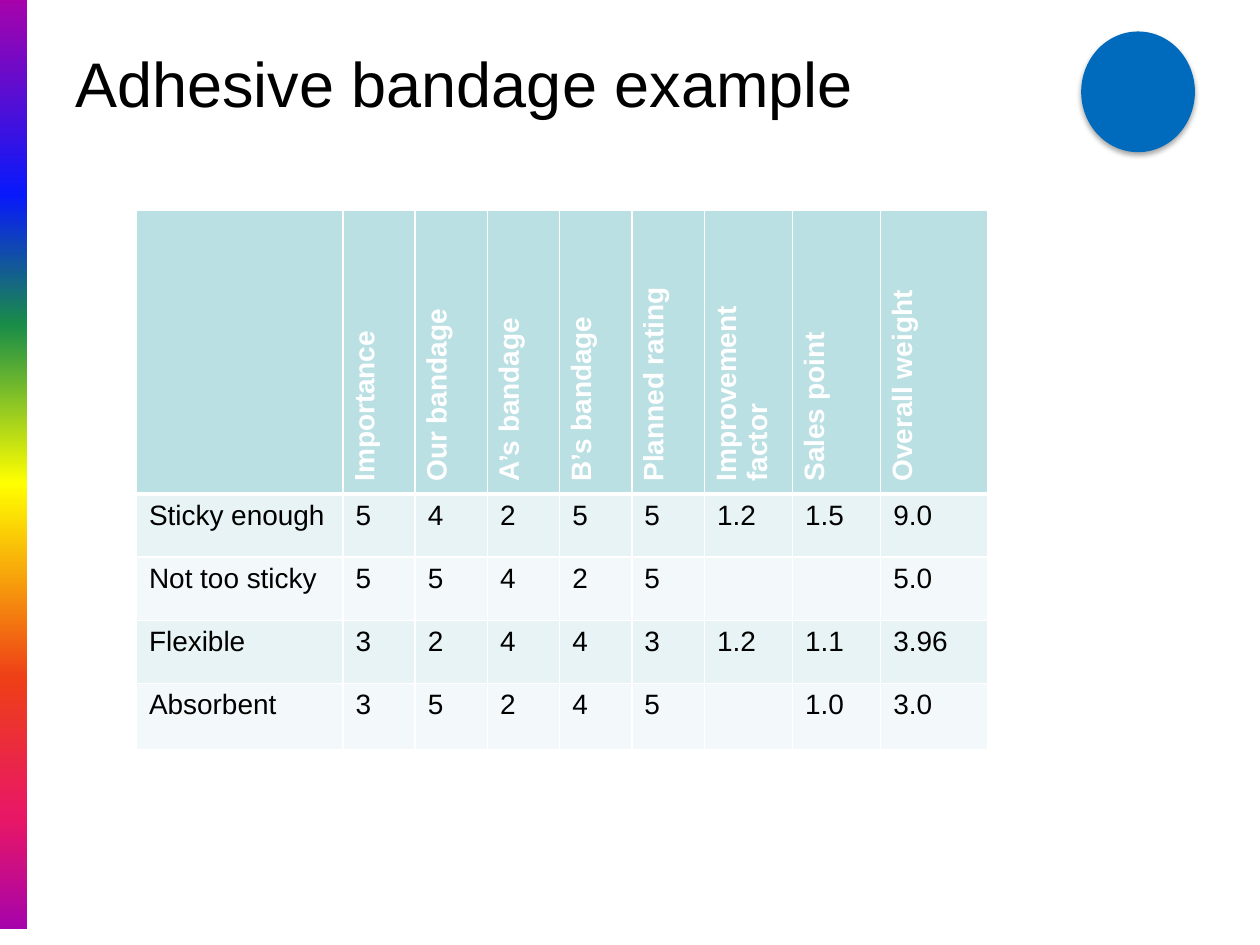
from dataclasses import dataclass

from lxml import etree
from pptx import Presentation
from pptx.dml.color import RGBColor
from pptx.enum import shapes, text
from pptx.oxml import ns
from pptx.util import Pt


@dataclass(frozen=True)
class Theme:
    font: str = "Arial"
    title_size: int = 36
    table_size: int = 16
    ink: str = "000000"
    white: str = "FFFFFF"
    header: str = "BBE0E3"
    bands: tuple = ("E7F3F4", "F3F9FA")
    badge: str = "006BBC"
    rainbow: tuple = ((0, "A603AB"), (21, "0819FB"), (35, "1A8D48"), (52, "FFFF00"),
                      (73, "EE3F17"), (88, "E81766"), (100, "A603AB"))


THEME = Theme()
HEADINGS = ["", "Importance", "Our bandage", "A’s bandage", "B’s bandage",
            "Planned rating", "Improvement factor", "Sales point", "Overall weight"]
RATINGS = [
    ["Sticky enough", "5", "4", "2", "5", "5", "1.2", "1.5", "9.0"],
    ["Not too sticky", "5", "5", "4", "2", "5", "", "", "5.0"],
    ["Flexible", "3", "2", "4", "4", "3", "1.2", "1.1", "3.96"],
    ["Absorbent", "3", "5", "2", "4", "5", "", "1.0", "3.0"],
]
COLUMN_WIDTHS = [118] + [41.3] * 4 + [41.5, 50.3, 50.4, 61.2]
ROW_HEIGHTS = [162] + [36.1] * 3 + [38]


def child(parent, tag, **attributes):
    element = etree.SubElement(parent, ns.qn(tag))
    for name, value in attributes.items():
        element.set(name, str(value))
    return element


def style(para, size, color, bold=False):
    para.font.name = THEME.font
    para.font.size = Pt(size)
    para.font.bold = bold
    para.font.color.rgb = RGBColor.from_string(color)


def add_plain_shape(page, kind, box):
    shape = page.shapes.add_shape(kind, *map(Pt, box))
    shape.shadow.inherit = False
    shape.line.fill.background()
    return shape


def add_rainbow_bar(page, box):
    bar = add_plain_shape(page, shapes.MSO_SHAPE.RECTANGLE, box)
    bar.fill.gradient()
    bar.fill.gradient_angle = 270  # counter-clockwise: runs top to bottom
    stops = bar._element.spPr.find(".//" + ns.qn("a:gsLst"))
    for stop in list(stops):
        stops.remove(stop)
    for percent, color in THEME.rainbow:
        child(child(stops, "a:gs", pos=percent * 1000), "a:srgbClr", val=color)


def add_title(page, box, words):
    frame = page.shapes.add_textbox(*map(Pt, box)).text_frame
    frame.word_wrap = True
    frame.vertical_anchor = text.MSO_ANCHOR.MIDDLE
    para = frame.paragraphs[0]
    para.text = words
    style(para, THEME.title_size, THEME.ink)


def set_borders(cell, top, bottom):
    properties = cell._tc.get_or_add_tcPr()
    sides = (("a:lnL", 1), ("a:lnR", 1), ("a:lnT", top), ("a:lnB", bottom))
    for place, (side, width) in enumerate(sides):
        line = child(properties, side, w=Pt(width))
        child(child(line, "a:solidFill"), "a:srgbClr", val=THEME.white)
        properties.insert(place, line)  # borders come before the fill


def fill_cell(cell, words, row):
    is_header = row == 0
    cell.fill.solid()
    color = THEME.header if is_header else THEME.bands[(row - 1) % 2]
    cell.fill.fore_color.rgb = RGBColor.from_string(color)
    set_borders(cell, top=3 if row == 1 else 1, bottom=3 if is_header else 1)
    if words:
        para = cell.text_frame.paragraphs[0]
        para.text = words
        style(para, THEME.table_size, THEME.white if is_header else THEME.ink, is_header)
        if is_header:
            cell._tc.get_or_add_tcPr().set("vert", "vert270")


def add_ratings_table(page, box):
    rows = [HEADINGS] + RATINGS
    table = page.shapes.add_table(len(rows), len(HEADINGS), *map(Pt, box)).table
    table.first_row = table.horz_banding = False
    for column, width in zip(table.columns, COLUMN_WIDTHS):
        column.width = Pt(width)
    for row, height in zip(table.rows, ROW_HEIGHTS):
        row.height = Pt(height)
    for i, values in enumerate(rows):
        for j, words in enumerate(values):
            fill_cell(table.cell(i, j), words, i)


def add_badge(page, box):
    badge = add_plain_shape(page, shapes.MSO_SHAPE.OVAL, box)
    badge.fill.solid()
    badge.fill.fore_color.rgb = RGBColor.from_string(THEME.badge)
    # Soft shadow straight below
    effects = badge._element.spPr.find(ns.qn("a:effectLst"))
    shadow = child(effects, "a:outerShdw", blurRad=Pt(3.1), dist=Pt(1.8),
                   dir=90 * 60000, rotWithShape=0)
    child(child(shadow, "a:srgbClr", val=THEME.ink), "a:alpha", val=35000)


def main():
    deck = Presentation()
    deck.slide_width, deck.slide_height = Pt(720), Pt(540)
    page = deck.slides.add_slide(deck.slide_layouts[6])
    add_rainbow_bar(page, (0, 0, 15.6, 531))
    add_title(page, (36, 21.6, 648, 50.4), "Adhesive bandage example")
    add_ratings_table(page, (78, 120.3, sum(COLUMN_WIDTHS), sum(ROW_HEIGHTS)))
    add_badge(page, (617.8, 18, 65, 69))
    deck.save("out.pptx")


if __name__ == "__main__":
    main()
